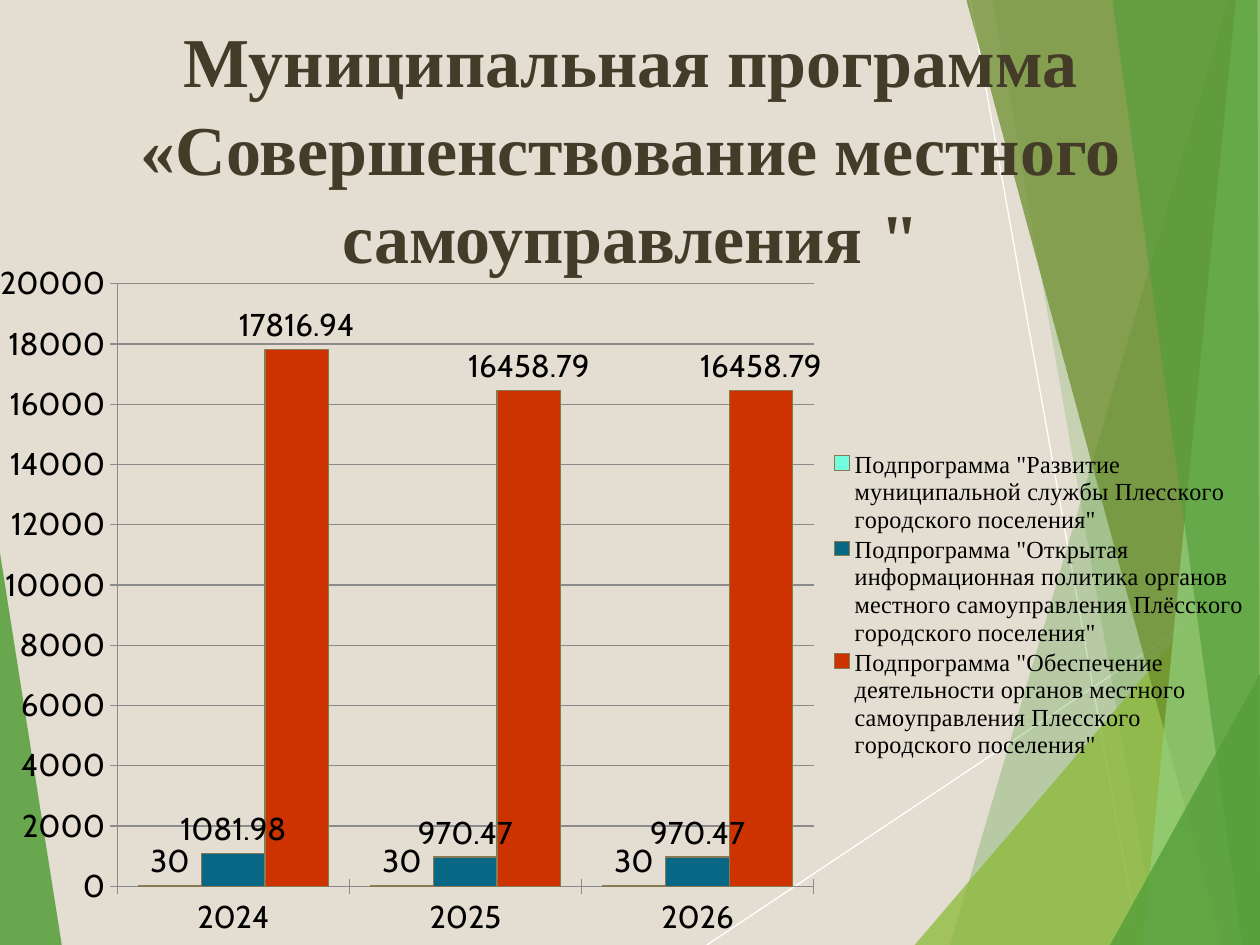
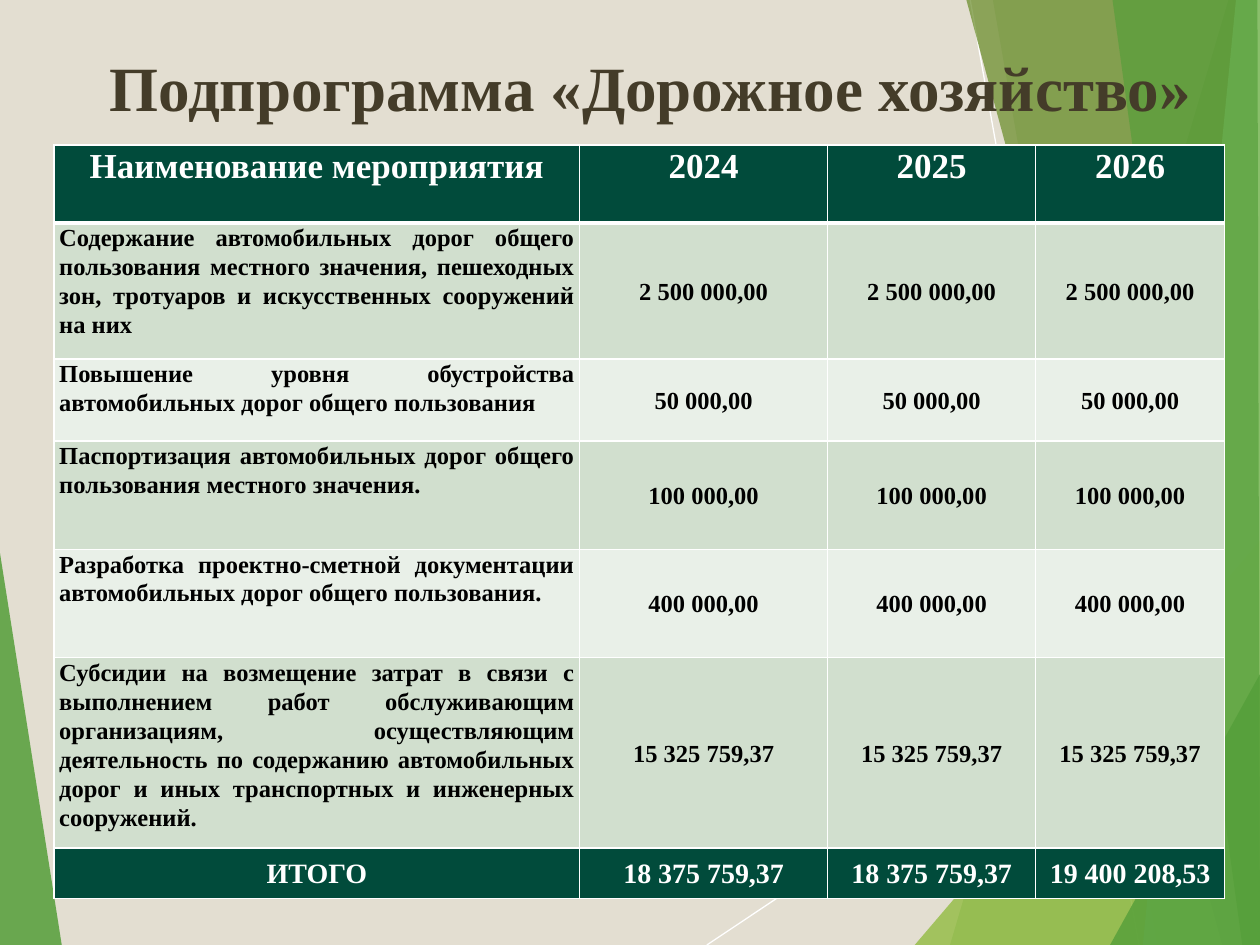
from pptx import Presentation
from pptx.chart.data import CategoryChartData
from pptx.dml.color import RGBColor
from pptx.enum.chart import XL_CHART_TYPE as CT, XL_LABEL_POSITION as LP
from pptx.enum.chart import XL_LEGEND_POSITION as LEG, XL_TICK_MARK as TM
from pptx.enum.shapes import MSO_CONNECTOR as MC
from pptx.enum.text import MSO_ANCHOR as MA, PP_ALIGN as PA
from pptx.oxml.ns import qn
from pptx.util import Inches, Pt
from lxml.etree import SubElement

W, H = 10, 7.5
SERIF, SANS = "Times New Roman", "Cabin"
BEIGE = RGBColor(0xE3, 0xDE, 0xD1)
BROWN = RGBColor(0x44, 0x3C, 0x29)
WHITE = RGBColor(0xFF, 0xFF, 0xFF)
BLACK = RGBColor(0, 0, 0)
GREEN = RGBColor(0x54, 0x9E, 0x39)
LIME = RGBColor(0x8A, 0xB8, 0x33)
OLIVE = RGBColor(0x67, 0x8A, 0x26)
MINT = RGBColor(0x93, 0xD0, 0x7D)
DARK = RGBColor(0x01, 0x4B, 0x3B)
BAND_A = RGBColor(0xD1, 0xDF, 0xCE)
BAND_B = RGBColor(0xE9, 0xF0, 0xE8)
GRID = RGBColor(0x8B, 0x8B, 0x8B)
OUTLINE = RGBColor(0x88, 0x79, 0x52)
AQUA = RGBColor(0x72, 0xFD, 0xDF)
BLUE = RGBColor(0x07, 0x67, 0x85)
RED = RGBColor(0xCC, 0x33, 0x00)

RAYS = [((5.61, H), (W, 4.57)), ((7.7, 0), (9.04, H))]
FACETS = [
    (GREEN, 85, [(0, 4.39), (0.49, H), (0, H)]),
    (GREEN, 30, [(9.75, 0), (7.54, H), (W, H), (W, 0)]),
    (GREEN, 20, [(7.88, 0), (9.19, H), (W, H), (W, 0)]),
    (LIME, 72, [(7.26, H), (W, 4.29), (W, H)]),
    (OLIVE, 70, [(7.67, 0), (9.7, H), (W, H), (W, 0)]),
    (MINT, 70, [(9.81, 0), (9.07, H), (W, H), (W, 0)]),
    (GREEN, 65, [(8.83, 0), (9.86, H), (W, H), (9.98, 0)]),
    (GREEN, 80, [(8.81, H), (W, 5.35), (W, H)]),
]

PROGRAM_TITLE = ["Муниципальная программа",
                 "«Совершенствование местного самоуправления \""]
YEARS = ["2024", "2025", "2026"]
SUBPROGRAMS = [
    ("Подпрограмма \"Развитие муниципальной службы Плесского городского поселения\"",
     AQUA, (30, 30, 30)),
    ("Подпрограмма \"Открытая информационная политика органов местного "
     "самоуправления Плёсского городского поселения\"",
     BLUE, (1081.98, 970.47, 970.47)),
    ("Подпрограмма \"Обеспечение деятельности органов местного самоуправления "
     "Плесского городского поселения\"",
     RED, (17816.94, 16458.79, 16458.79)),
]
PLOT = (0.081, 0.027, 0.56, 0.887)
LEGEND = (0.67, 0.27, 0.33, 0.46)

ROADS_TITLE = ["Подпрограмма «Дорожное хозяйство»"]
COLS = [4.17, 1.97, 1.65, 1.5]
ROWS = [0.62, 1.08, 0.65, 0.86, 0.86, 1.51, 0.4]
MEASURES = [
    ("Содержание автомобильных дорог общего пользования местного значения, "
     "пешеходных зон, тротуаров и искусственных сооружений на них", "2 500 000,00", 0),
    ("Повышение уровня обустройства автомобильных дорог общего пользования",
     "50 000,00", 0),
    ("Паспортизация автомобильных дорог общего пользования местного значения.",
     "100 000,00", 2),
    ("Разработка проектно-сметной документации автомобильных дорог общего "
     "пользования.", "400 000,00", 2),
    ("Субсидии на возмещение затрат в связи с выполнением работ обслуживающим "
     "организациям, осуществляющим деятельность по содержанию автомобильных дорог "
     "и иных транспортных и инженерных сооружений.", "15 325 759,37", 2),
]
TOTALS = ["ИТОГО", "18 375 759,37", "18 375 759,37", "19 400 208,53"]


def set_font(font, size, color, name=SERIF, bold=False):
    font.size, font.name, font.bold = Pt(size), name, bold
    font.color.rgb = color


def add_base(prs):
    s = prs.slides.add_slide(prs.slide_layouts[6])
    s.background.fill.solid()
    s.background.fill.fore_color.rgb = BEIGE
    for start, end in RAYS:
        ray = s.shapes.add_connector(MC.STRAIGHT, *map(Inches, start + end))
        ray.line.color.rgb = WHITE
        ray.line.width = Pt(0.75)
        SubElement(ray._element.spPr, qn("a:effectLst"))
    for color, alpha, points in FACETS:
        pts = [(Inches(x), Inches(y)) for x, y in points]
        fb = s.shapes.build_freeform(*pts[0], scale=1.0)
        fb.add_line_segments(pts[1:], close=True)
        sp = fb.convert_to_shape()
        sp.shadow.inherit = False
        sp.fill.solid()
        sp.fill.fore_color.rgb = color
        sp.line.fill.background()
        clr = sp._element.spPr.find(qn("a:solidFill"))[0]
        SubElement(clr, qn("a:alpha"), val=str(alpha * 1000))
    return s


def add_title(s, lines, box, size, spacing=1.0):
    tf = s.shapes.add_textbox(*map(Inches, box)).text_frame
    tf.word_wrap = True
    tf.vertical_anchor = MA.MIDDLE
    p = tf.paragraphs[0]
    p.alignment, p.line_spacing = PA.CENTER, spacing
    for i, line in enumerate(lines):
        if i:
            p.add_line_break()
        r = p.add_run()
        r.text = line
        set_font(r.font, size, BROWN, bold=True)


def set_layout(parent, box, inner=False):
    old = parent.find(qn("c:layout"))
    if old is not None:
        parent.remove(old)
    layout = SubElement(parent, qn("c:layout"))
    manual = SubElement(layout, qn("c:manualLayout"))
    if inner:
        SubElement(manual, qn("c:layoutTarget"), val="inner")
    for tag in ("xMode", "yMode"):
        SubElement(manual, qn("c:" + tag), val="edge")
    for tag, share in zip("xywh", box):
        SubElement(manual, qn("c:" + tag), val=str(share))
    parent.remove(layout)
    parent.insert(0 if inner else 1, layout)


def add_program_chart(s):
    data = CategoryChartData()
    data.categories = YEARS
    for name, _, values in SUBPROGRAMS:
        data.add_series(name, values)
    chart = s.shapes.add_chart(CT.COLUMN_CLUSTERED, 0, Inches(2.1), Inches(W),
                               Inches(H - 2.1), data).chart
    chart.has_title = False
    set_font(chart.font, 18, BLACK, SANS)
    chart.has_legend = True
    chart.legend.position = LEG.RIGHT
    chart.legend.include_in_layout = False
    set_font(chart.legend.font, 14, BLACK)
    set_layout(chart.legend._element, LEGEND)
    set_layout(chart._chartSpace.chart.plotArea, PLOT, inner=True)
    value_axis = chart.value_axis
    value_axis.minimum_scale, value_axis.maximum_scale = 0, 20000
    value_axis.major_unit = 2000
    value_axis.major_gridlines.format.line.color.rgb = GRID
    for axis in (value_axis, chart.category_axis):
        axis.major_tick_mark = TM.CROSS
        axis.format.line.color.rgb = GRID
    plot = chart.plots[0]
    plot.gap_width, plot.overlap, plot.vary_by_categories = 66, 0, False
    for series, (_, color, _) in zip(plot.series, SUBPROGRAMS):
        series.format.fill.solid()
        series.format.fill.fore_color.rgb = color
        series.format.line.color.rgb = OUTLINE
        series.format.line.width = Pt(0.75)
        labels = series.data_labels
        labels.show_value, labels.position = True, LP.OUTSIDE_END
        set_font(labels.font, 18, BLACK, SANS)


def set_borders(cell, widths):
    tc_pr = cell._tc.get_or_add_tcPr()
    for i, (side, width) in enumerate(zip("LRTB", widths)):
        ln = SubElement(tc_pr, qn("a:ln" + side), w=str(Pt(width)))
        fill = SubElement(ln, qn("a:solidFill"))
        SubElement(fill, qn("a:srgbClr"), val=str(WHITE))
        tc_pr.remove(ln)
        tc_pr.insert(i, ln)


def fill_cell(cell, text, size, color, back, align, anchor, gap):
    cell.fill.solid()
    cell.fill.fore_color.rgb = back
    cell.margin_left = cell.margin_right = Inches(0.04)
    cell.margin_top = cell.margin_bottom = 0
    cell.vertical_anchor = anchor
    p = cell.text_frame.paragraphs[0]
    p.alignment, p.line_spacing = align, 1.07
    p.space_before = p.space_after = Pt(gap)
    r = p.add_run()
    r.text = text
    set_font(r.font, size, color, bold=True)


def add_roads_table(s):
    rows = [["Наименование мероприятия"] + YEARS]
    rows += [[name] + [cost] * len(YEARS) for name, cost, _ in MEASURES]
    rows.append(TOTALS)
    last = len(rows) - 1
    table = s.shapes.add_table(len(rows), len(COLS), *map(
        Inches, (0.43, 1.15, sum(COLS), sum(ROWS)))).table
    table.horz_banding = False
    for col, width in zip(table.columns, COLS):
        col.width = Inches(width)
    for i, (row, height) in enumerate(zip(rows, ROWS)):
        table.rows[i].height = Inches(height)
        for j, text in enumerate(row):
            if i == 0:
                look = 20, WHITE, DARK, PA.CENTER, MA.TOP, 2
            elif i == last:
                look = 16, WHITE, DARK, PA.CENTER, MA.MIDDLE, 0 if j else 2
            else:
                back = BAND_A if i % 2 else BAND_B
                place = ((PA.CENTER, MA.MIDDLE, 0) if j
                         else (PA.JUSTIFY, MA.TOP, MEASURES[i - 1][2]))
                look = 14, BLACK, back, *place
            cell = table.cell(i, j)
            fill_cell(cell, text, *look)
            set_borders(cell, (1, 1, 3 if i == 1 else 1, 3 if i == 0 else 1))


def main():
    prs = Presentation()
    prs.slide_width, prs.slide_height = Inches(W), Inches(H)
    s = add_base(prs)
    add_title(s, PROGRAM_TITLE, (0.2, 0.13, 9.61, 2.05), 40, 1.05)
    add_program_chart(s)
    s = add_base(prs)
    add_title(s, ROADS_TITLE, (0.67, 0.29, 8.98, 0.79), 36)
    add_roads_table(s)
    prs.save("out.pptx")


if __name__ == "__main__":
    main()
